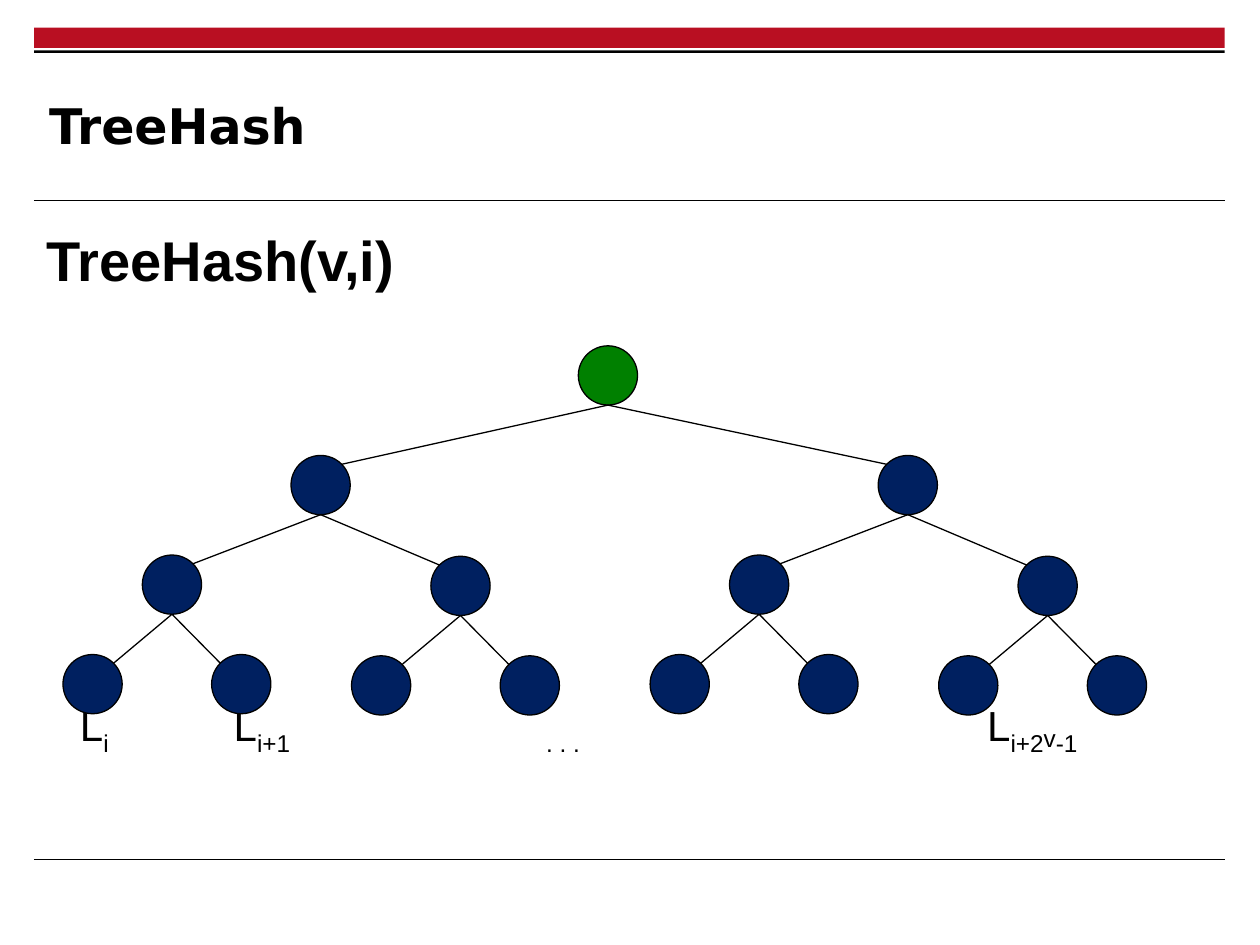
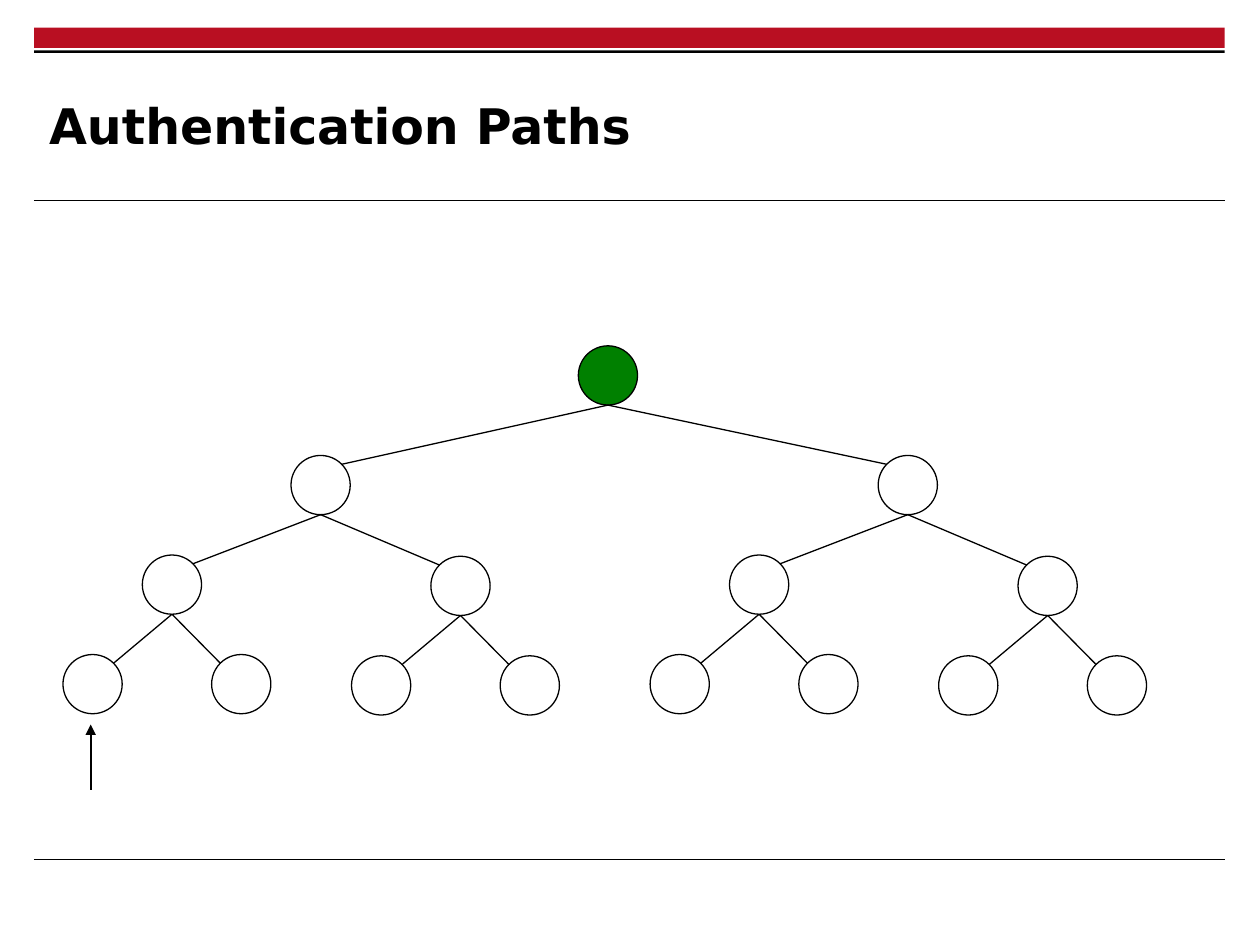
from dataclasses import dataclass

from lxml.etree import SubElement
from pptx import Presentation
from pptx.dml.color import RGBColor
from pptx.enum.shapes import MSO_CONNECTOR, MSO_SHAPE
from pptx.enum.text import MSO_ANCHOR, MSO_AUTO_SIZE, PP_ALIGN
from pptx.oxml.ns import qn
from pptx.util import Inches, Pt

COLUMNS, ROWS = 100, 75
SLIDE_WIDTH, SLIDE_HEIGHT = Inches(10), Inches(7.5)
TITLE_ONLY = 5


@dataclass(frozen=True)
class Theme:
    """Colours, fonts, type sizes and line widths of the deck."""
    ink: str = "000000"
    band: str = "B90F22"
    root: str = "008000"
    hashed: str = "002060"
    empty: str = "FFFFFF"
    title_font: str = "DejaVu Sans"
    body_font: str = "Arial"
    title_size: int = 28
    heading_size: int = 32
    label_size: int = 24
    rule_width: float = 0.6
    edge_width: float = 0.75
    arrow_width: float = 1.25


@dataclass(frozen=True)
class Box:
    """A region measured in grid columns and rows."""
    left: float
    top: float
    width: float
    height: float

    def inner(self, left, top, width, height):
        """Return a region offset from this one's corner."""
        return Box(self.left + left, self.top + top, width, height)

    def frame(self):
        """Return left, top, width and height as slide lengths."""
        return (across(self.left), down(self.top),
                across(self.width), down(self.height))


THEME = Theme()
PAGE = Box(0, 0, COLUMNS, ROWS)
FRAME = PAGE.inner(2.7, 2.2, 94.5, 66)
TREE = PAGE.inner(5, 27.4, 86, 29.3)
NODE = 4.7
ROOT_CENTRE = (43.25, 2.4)
BRANCHES = (
    ((-22.8, 8.7), (23.8, 8.7)),
    ((-11.8, 7.9), (11.1, 8)),
    ((-6.3, 7.9), (5.5, 7.9)),
)
DIAGONAL = 0.35 * NODE
LABEL_TABS = (12.2, 37, 72)
LEAF_LABELS = (
    ("L", 0), ("i", -25), ("\tL", 0), ("i+1", -25), ("\t. . .", -25),
    ("\tL", 0), ("i+2", -25), ("v", -14), ("-1", -25),
)


def across(columns):
    """Turn grid columns into a slide length."""
    return round(SLIDE_WIDTH * columns / COLUMNS)


def down(rows):
    """Turn grid rows into a slide length."""
    return round(SLIDE_HEIGHT * rows / ROWS)


def write(para, text, size, font=THEME.body_font, bold=False, baseline=0):
    """Add one formatted span to a paragraph."""
    span = para.add_run()
    span.text = text
    span.font.size = Pt(size)
    span.font.name = font
    span.font.bold = bold
    span.font.color.rgb = RGBColor.from_string(THEME.ink)
    if baseline:
        span._r.get_or_add_rPr().set("baseline", str(baseline * 1000))


def add_solid(page, box, kind, fill, outline=None):
    """Add a filled preset shape, outlined when a width is given."""
    shape = page.shapes.add_shape(kind, *box.frame())
    shape.shadow.inherit = False
    shape.fill.solid()
    shape.fill.fore_color.rgb = RGBColor.from_string(fill)
    if outline:
        shape.line.color.rgb = RGBColor.from_string(THEME.ink)
        shape.line.width = Pt(outline)
    else:
        shape.line.fill.background()


def add_line(page, start, end, width, arrow=False):
    """Add a straight line between two grid points."""
    line = page.shapes.add_connector(
        MSO_CONNECTOR.STRAIGHT, across(start[0]), down(start[1]),
        across(end[0]), down(end[1]))
    line.line.color.rgb = RGBColor.from_string(THEME.ink)
    line.line.width = Pt(width)
    if arrow:
        SubElement(line.line._get_or_add_ln(), qn("a:tailEnd"), type="triangle")
    SubElement(line._element.spPr, qn("a:effectLst"))


def add_text_box(page, box):
    """Add an empty wrapping text box and return its text frame."""
    frame = page.shapes.add_textbox(*box.frame()).text_frame
    frame.word_wrap = True
    return frame


def clear_margins(frame):
    """Remove the inner margins of a text frame."""
    frame.margin_left = frame.margin_right = 0
    frame.margin_top = frame.margin_bottom = 0


def draw_frame(page, box):
    """Draw the top band and the rules shared by every slide."""
    bands = ((0, 1.6, THEME.band), (1.8, 0.2, THEME.ink))
    for top, height, fill in bands:
        add_solid(page, box.inner(0, top, box.width, height),
                  MSO_SHAPE.RECTANGLE, fill)
    for row in (13.7, box.height):
        y = box.top + row
        add_line(page, (box.left, y), (box.left + box.width, y),
                 THEME.rule_width)


def place_title(page, box, text):
    """Move the title placeholder into its box and fill it."""
    title = page.shapes.title
    title.left, title.top, title.width, title.height = box.frame()
    frame = title.text_frame
    clear_margins(frame)
    frame.word_wrap = True
    frame.auto_size = MSO_AUTO_SIZE.NONE
    frame.vertical_anchor = MSO_ANCHOR.MIDDLE
    para = frame.paragraphs[0]
    para.alignment = PP_ALIGN.LEFT
    write(para, text, THEME.title_size, font=THEME.title_font, bold=True)


def add_page(deck, title):
    """Add a slide with the shared frame and a title."""
    page = deck.slides.add_slide(deck.slide_layouts[TITLE_ONLY])
    draw_frame(page, FRAME)
    place_title(page, FRAME.inner(1.2, 3.1, 72.9, 9.2), title)
    return page


def draw_node(page, x, y, fill, level, node_fill):
    """Draw a node, then its edges and the subtrees below it."""
    half = NODE / 2
    add_solid(page, Box(x - half, y - half, NODE, NODE), MSO_SHAPE.OVAL,
              fill, outline=THEME.edge_width)
    if level == len(BRANCHES):
        return
    for side, (shift, drop) in zip((1, -1), BRANCHES[level]):
        child_x, child_y = x + shift, y + drop
        draw_node(page, child_x, child_y, node_fill, level + 1, node_fill)
        add_line(page, (x, y + half),
                 (child_x + side * DIAGONAL, child_y - DIAGONAL),
                 THEME.edge_width)


def draw_tree(page, box, node_fill):
    """Draw the binary hash tree with a highlighted root."""
    draw_node(page, box.left + ROOT_CENTRE[0], box.top + ROOT_CENTRE[1],
              THEME.root, 0, node_fill)


def draw_leaf_labels(page, box):
    """Write the leaf names in one line with tab stops."""
    frame = add_text_box(page, box)
    clear_margins(frame)
    para = frame.paragraphs[0]
    stops = SubElement(para._p.get_or_add_pPr(), qn("a:tabLst"))
    for column in LABEL_TABS:
        SubElement(stops, qn("a:tab"), pos=str(across(column)), algn="l")
    for text, baseline in LEAF_LABELS:
        write(para, text, THEME.label_size, baseline=baseline)


def build_tree_hash(deck):
    """Build the slide that names the hashed leaves."""
    page = add_page(deck, "TreeHash")
    draw_leaf_labels(page, TREE.inner(1.35, 28.15, 88, 5))
    draw_tree(page, TREE, THEME.hashed)
    heading = add_text_box(page, FRAME.inner(0, 15.2, 37.1, 6.4))
    write(heading.paragraphs[0], "TreeHash(v,i)", THEME.heading_size, bold=True)


def build_authentication_paths(deck):
    """Build the slide that points at the first leaf."""
    page = add_page(deck, "Authentication Paths")
    draw_tree(page, TREE, THEME.empty)
    x = TREE.left + 2.2
    add_line(page, (x, TREE.top + 35.3), (x, TREE.top + 30.1),
             THEME.arrow_width, arrow=True)


def main():
    """Build and save the deck."""
    deck = Presentation()
    deck.slide_width, deck.slide_height = SLIDE_WIDTH, SLIDE_HEIGHT
    build_tree_hash(deck)
    build_authentication_paths(deck)
    deck.save("out.pptx")


if __name__ == "__main__":
    main()
